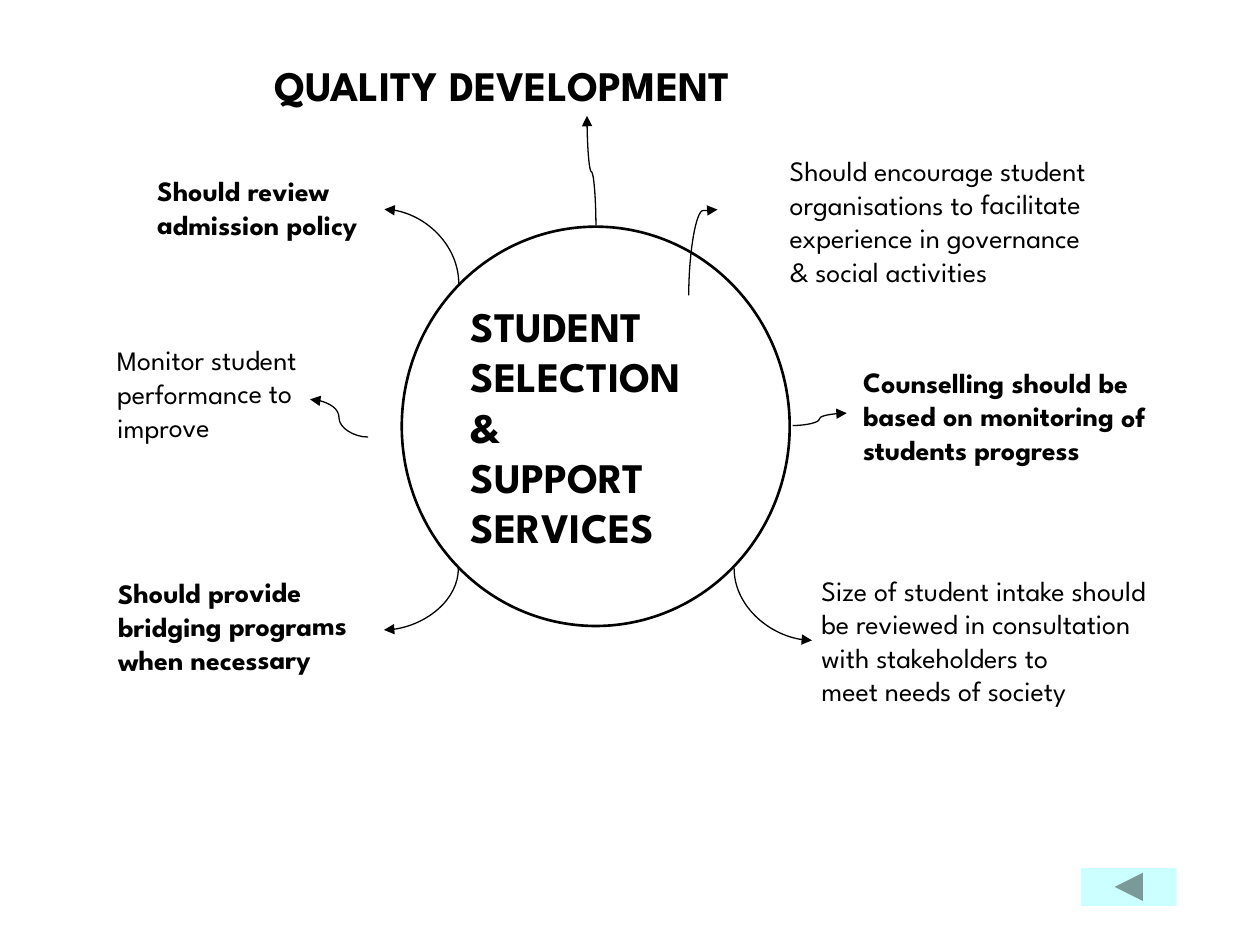
from lxml.etree import SubElement
from pptx import Presentation
from pptx.dml.color import RGBColor
from pptx.enum.shapes import MSO_CONNECTOR, MSO_SHAPE
from pptx.enum.text import MSO_ANCHOR, MSO_AUTO_SIZE, PP_ALIGN
from pptx.oxml.ns import qn
from pptx.util import Cm, Pt

BLACK = RGBColor(0x00, 0x00, 0x00)
PALE_CYAN = RGBColor(0xCC, 0xFF, 0xFF)


class SlideBuilder:
    font_name = "League Spartan"
    heading_size = Pt(24)
    note_size = Pt(16)

    def __init__(self, slide):
        self.slide = slide

    def fill_text(self, shape, lines, size, bold, anchor=MSO_ANCHOR.TOP):
        frame = shape.text_frame
        frame.word_wrap = True
        frame.auto_size = MSO_AUTO_SIZE.NONE
        frame.vertical_anchor = anchor
        for index, line in enumerate(lines):
            paragraph = frame.add_paragraph() if index else frame.paragraphs[0]
            paragraph.alignment = PP_ALIGN.LEFT
            run = paragraph.add_run()
            run.text = line
            run.font.name = self.font_name
            run.font.size = size
            run.font.bold = bold
            run.font.color.rgb = BLACK

    def title(self, text, left, top, width, height):
        title = self.slide.shapes.title
        title.left, title.top = Cm(left), Cm(top)
        title.width, title.height = Cm(width), Cm(height)
        self.fill_text(title, [text], self.heading_size, True)

    def shape(self, kind, left, top, width, height):
        shape = self.slide.shapes.add_shape(
            kind, Cm(left), Cm(top), Cm(width), Cm(height))
        shape.shadow.inherit = False
        return shape

    def circle(self, lines, *box):
        circle = self.shape(MSO_SHAPE.OVAL, *box)
        circle.fill.background()
        circle.line.color.rgb = BLACK
        circle.line.width = Pt(1.5)
        self.fill_text(circle, lines, self.heading_size, True, MSO_ANCHOR.MIDDLE)

    def back_button(self, *box):
        button = self.shape(MSO_SHAPE.ACTION_BUTTON_BACK_OR_PREVIOUS, *box)
        button.fill.solid()
        button.fill.fore_color.rgb = PALE_CYAN
        button.line.fill.background()

    def note(self, lines, bold, left, top, width, height, rotation=0):
        box = self.slide.shapes.add_textbox(
            Cm(left), Cm(top), Cm(width), Cm(height))
        box.rotation = rotation
        self.fill_text(box, lines, self.note_size, bold)

    def curved_arrow(self, left, top, width, height, rotation, flip=None, bend=None):
        """Draw a curve in its unrotated box; without a bend it is a quarter turn."""
        arrow = self.slide.shapes.add_connector(
            MSO_CONNECTOR.CURVE, Cm(left), Cm(top),
            Cm(left + width), Cm(top + height))
        arrow.line.color.rgb = BLACK
        arrow.line.width = Pt(0.75)
        properties = arrow._element.spPr
        transform = properties.find(qn("a:xfrm"))
        transform.set("rot", str(rotation * 60000))
        if flip:
            transform.set(flip, "1")
        geometry = properties.find(qn("a:prstGeom"))
        if bend is None:
            geometry.set("prst", "curvedConnector2")
        else:
            SubElement(geometry.find(qn("a:avLst")), qn("a:gd"),
                       name="adj1", fmla=f"val {round(bend * 100000)}")
        SubElement(properties.find(qn("a:ln")), qn("a:tailEnd"), type="triangle")
        SubElement(properties, qn("a:effectLst"))


def main():
    presentation = Presentation()
    presentation.slide_width, presentation.slide_height = Cm(25.4), Cm(19.05)
    slide = presentation.slides.add_slide(presentation.slide_layouts[5])
    builder = SlideBuilder(slide)

    builder.title("QUALITY DEVELOPMENT", 5.28, 1.07, 13.13, 1.27)
    builder.circle(["STUDENT", "SELECTION", "&", "SUPPORT", "SERVICES"],
                   8.1, 4.57, 7.82, 8.05)

    builder.curved_arrow(13.31, 4.8, 1.73, 0.58, 270, bend=0.99)
    builder.curved_arrow(15.98, 8.33, 1.09, 0.25, 0, "flipV", 0.49)
    builder.curved_arrow(6.25, 8.05, 1.17, 0.76, 180, bend=0.5)

    builder.note(["Should encourage student", "organisations to facilitate",
                  "experience in governance", "& social activities"],
                 False, 15.67, 2.97, 7.8, 2.97, 359.9)
    builder.note(["Counselling should be based on monitoring of",
                  "students progress"],
                 True, 17.15, 7.24, 7.11, 2.29, 0.1)
    builder.note(["Size of student intake should", "be reviewed in consultation",
                  "with stakeholders to", "meet needs of society"],
                 False, 16.31, 11.43, 8.18, 2.97)
    builder.note(["Should provide", "bridging programs", "when necessary"],
                 True, 2.13, 11.46, 6.76, 2.29, 359.5)
    builder.note(["Monitor student", "performance to", "improve"],
                 False, 2.11, 6.78, 4.85, 2.29, 359.7)
    builder.note(["Should review", "admission policy"],
                 True, 2.92, 3.38, 5.11, 1.63, 0.2)

    builder.curved_arrow(7.75, 4.22, 1.5, 1.5, 90, "flipH")
    builder.curved_arrow(7.87, 11.33, 1.24, 1.5, 90)
    builder.curved_arrow(14.86, 11.4, 1.45, 1.57, 270, "flipH")
    builder.curved_arrow(10.82, 3.35, 2.21, 0.18, 90, "flipH", 0.49)
    builder.back_button(21.79, 17.5, 1.93, 0.76)

    presentation.save("out.pptx")


if __name__ == "__main__":
    main()
